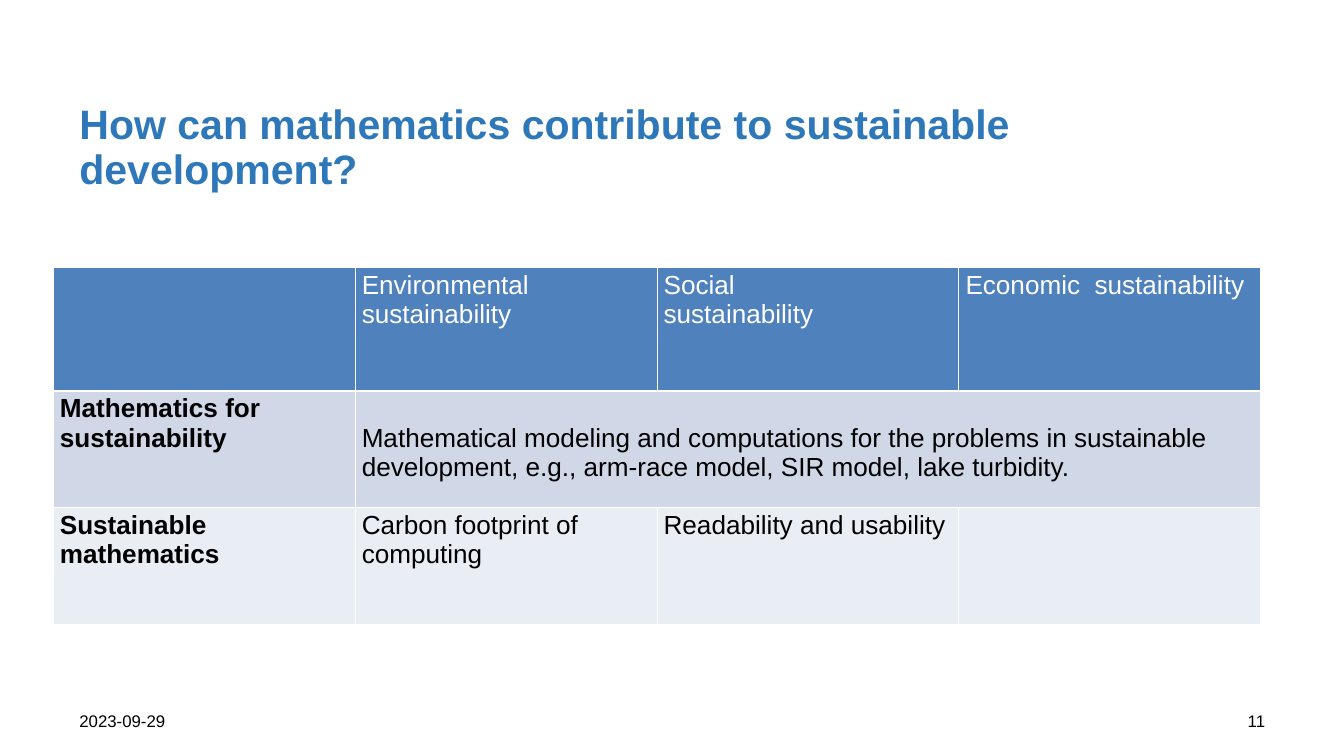
from dataclasses import dataclass

from lxml import etree
from pptx import Presentation
from pptx.dml.color import RGBColor
from pptx.enum.text import MSO_ANCHOR, MSO_AUTO_SIZE, PP_ALIGN
from pptx.oxml.ns import qn
from pptx.util import Cm, Pt

LEFT, RIGHT = PP_ALIGN.LEFT, PP_ALIGN.RIGHT
TOP, MIDDLE = MSO_ANCHOR.TOP, MSO_ANCHOR.MIDDLE
NO_AUTOFIT = MSO_AUTO_SIZE.NONE
TITLE_ONLY = 5


@dataclass(frozen=True)
class Theme:
    font: str = "Arial"
    heading: str = "2E78BA"
    ink: str = "000000"
    white: str = "FFFFFF"
    header_fill: str = "4F81BD"
    band_fills: tuple = ("D0D8E8", "E9EDF4")
    title_size: int = 44
    title_leading: int = 48
    table_size: int = 28
    footer_size: int = 18
    border: int = 1
    header_border: int = 3


THEME = Theme()

HEADINGS = ["", "Environmental sustainability", "Social \vsustainability",
            "Economic  sustainability"]
MODELING = ("Mathematical modeling and computations for the problems in sustainable "
            "development, e.g., arm-race model, SIR model, lake turbidity.")
TOPICS = [
    ["Mathematics for sustainability", MODELING, "", ""],
    ["Sustainable mathematics", "Carbon footprint of computing",
     "Readability and usability", ""],
]


def write(frame, text, size, color=THEME.ink, bold=False, align=LEFT, leading=None):
    frame.word_wrap = True
    paragraph = frame.paragraphs[0]
    paragraph.text = text
    paragraph.alignment = align
    if leading:
        paragraph.line_spacing = Pt(leading)
    font = paragraph.font
    for run in paragraph.runs:
        font = run.font
        font.name = THEME.font
        font.size = Pt(size)
        font.bold = bold
        font.color.rgb = RGBColor.from_string(color)


def set_insets(frame):
    frame.auto_size = NO_AUTOFIT
    frame.vertical_anchor = MIDDLE
    frame.margin_left = frame.margin_right = Cm(0.46)
    frame.margin_top = frame.margin_bottom = Cm(0.23)


def add_title(slide, left, top, width, height):
    title = slide.shapes.title
    title.left, title.top, title.width, title.height = left, top, width, height
    set_insets(title.text_frame)
    write(title.text_frame, "How can mathematics contribute to sustainable development?",
          THEME.title_size, color=THEME.heading, bold=True, leading=THEME.title_leading)


def add_footer(slide, left, top, width, height):
    part_width = Cm(11.86)
    parts = [("2023-09-29", left, LEFT), ("11", left + width - part_width, RIGHT)]
    for text, part_left, align in parts:
        frame = slide.shapes.add_textbox(part_left, top, part_width, height).text_frame
        set_insets(frame)
        write(frame, text, THEME.footer_size, align=align)


def set_borders(cell, bottom):
    properties = cell._tc.get_or_add_tcPr()
    widths = {"a:lnL": THEME.border, "a:lnR": THEME.border,
              "a:lnT": THEME.border, "a:lnB": bottom}
    for position, (tag, width) in enumerate(widths.items()):
        line = etree.Element(qn(tag), w=str(Pt(width)))
        fill = etree.SubElement(line, qn("a:solidFill"))
        etree.SubElement(fill, qn("a:srgbClr"), val=THEME.white)
        properties.insert(position, line)


def add_topics_table(slide, left, top, width, row_heights):
    rows = [HEADINGS, *TOPICS]
    fills = [THEME.header_fill, *THEME.band_fills]
    table = slide.shapes.add_table(len(rows), len(HEADINGS), left, top, width,
                                   sum(row_heights)).table
    for row, height in zip(table.rows, row_heights):
        row.height = height

    for r, (texts, fill) in enumerate(zip(rows, fills)):
        is_header = r == 0
        for c, text in enumerate(texts):
            cell = table.cell(r, c)
            cell.fill.solid()
            cell.fill.fore_color.rgb = RGBColor.from_string(fill)
            cell.vertical_anchor = TOP
            set_borders(cell, THEME.header_border if is_header else THEME.border)
            if text:
                write(cell.text_frame, text, THEME.table_size,
                      color=THEME.white if is_header else THEME.ink,
                      bold=c == 0)

    modeling = table.cell(1, 1)
    modeling.merge(table.cell(1, len(HEADINGS) - 1))
    modeling.margin_top = Cm(1.25)


def main():
    presentation = Presentation()
    presentation.slide_width = Cm(50.8)
    presentation.slide_height = Cm(28.58)
    slide = presentation.slides.add_slide(presentation.slide_layouts[TITLE_ONLY])
    add_title(slide, Cm(2.54), Cm(3.2), Cm(38.02), Cm(4.78))
    add_footer(slide, Cm(2.54), Cm(26.49), Cm(45.74), Cm(1.52))
    add_topics_table(slide, Cm(2.01), Cm(10.11), Cm(45.64),
                     [Cm(4.67), Cm(4.42), Cm(4.42)])
    presentation.save("out.pptx")


if __name__ == "__main__":
    main()
